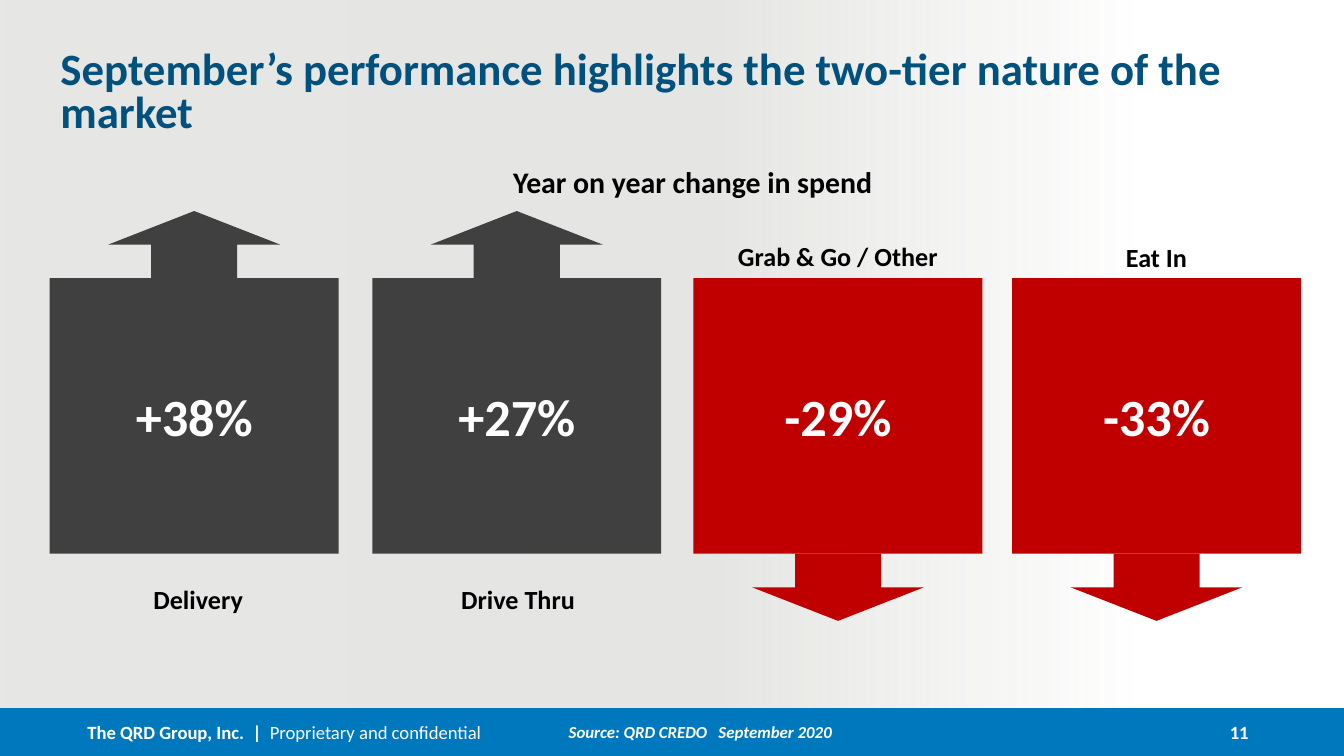
from lxml import etree
from pptx import Presentation
from pptx import util as u
from pptx.dml.color import RGBColor
from pptx.enum import shapes, text
from pptx.oxml.ns import qn

FONT = "Calibri"
WHITE, BLACK, BLUE, NAVY = "FFFFFF", "000000", "0078BE", "00517D"
GREY, RED = "404040", "C00000"
INSETS = (0.1, 0.05, 0.1, 0.05)
NO_INSETS = (0, 0, 0, 0)
LEFT, CENTER, RIGHT = text.PP_ALIGN.LEFT, text.PP_ALIGN.CENTER, text.PP_ALIGN.RIGHT
TOP, MIDDLE = text.MSO_ANCHOR.TOP, text.MSO_ANCHOR.MIDDLE

SLIDE_WIDTH = 10
SLIDE_HEIGHT = SLIDE_WIDTH * 9 / 16
FOOTER_TOP = 5.27
FOOTER_HEIGHT = SLIDE_HEIGHT - FOOTER_TOP
CARD_TOP, CARD_WIDTH, CARD_HEIGHT = 2.07, 2.15, 2.05
ARROW_LENGTH, ARROW_SPAN = 0.5, 1.28
CHANNELS = [
    ("Delivery", "+38%", 0.37, (0.43, 4.29, 2.09, 0.34)),
    ("Drive Thru", "+27%", 2.77, (2.79, 4.29, 2.13, 0.34)),
    ("Grab & Go / Other", "-29%", 5.16, (5.16, 1.74, 2.15, 0.34)),
    ("Eat In", "-33%", 7.53, (7.53, 1.75, 2.15, 0.34)),
]


def color(value):
    return RGBColor.from_string(value)


def inches(box):
    return [u.Inches(length) for length in box]


def write(shape, runs, size, ink, align=CENTER, anchor=TOP, insets=INSETS,
          italic=False, line_spacing=None, space_after=None):
    frame = shape.text_frame
    frame.word_wrap = True
    frame.vertical_anchor = anchor
    (frame.margin_left, frame.margin_top,
     frame.margin_right, frame.margin_bottom) = inches(insets)
    paragraph = frame.paragraphs[0]
    paragraph.alignment = align
    paragraph.line_spacing = line_spacing
    if space_after is not None:
        paragraph.space_after = u.Pt(space_after)
    for words, bold in runs:
        run = paragraph.add_run()
        run.text = words
        font = run.font
        font.name, font.size = FONT, u.Pt(size)
        font.bold, font.italic = bold, italic
        font.color.rgb = color(ink)


def add_text(slide, box, runs, size, ink, **options):
    write(slide.shapes.add_textbox(*inches(box)), runs, size, ink, **options)


def add_block(slide, kind, box, fill):
    shape = slide.shapes.add_shape(kind, *inches(box))
    shape.shadow.inherit = False
    shape.fill.solid()
    shape.fill.fore_color.rgb = color(fill)
    shape.line.fill.background()
    return shape


def add_fading_panel(slide, box):
    shape = add_block(slide, shapes.MSO_SHAPE.RECTANGLE, box, WHITE)
    shape.fill.gradient()
    shape.fill.gradient_angle = 180
    stops = shape._element.spPr.find(".//" + qn("a:gsLst"))
    for stop in list(stops):
        stops.remove(stop)
    for position, tone, alpha in ((0, "E5E5E3", 0), (38, "E5E5E3", 100), (100, "E6E6E5", 100)):
        stop = etree.SubElement(stops, qn("a:gs"), pos=str(position * 1000))
        tint = etree.SubElement(stop, qn("a:srgbClr"), val=tone)
        etree.SubElement(tint, qn("a:alpha"), val=str(alpha * 1000))


def add_channel(slide, name, change, left, label_box):
    rising = change.startswith("+")
    fill = GREY if rising else RED
    card = add_block(slide, shapes.MSO_SHAPE.RECTANGLE,
                     (left, CARD_TOP, CARD_WIDTH, CARD_HEIGHT), fill)
    write(card, [(change, True)], 28, WHITE, anchor=MIDDLE)

    center_x = left + CARD_WIDTH / 2
    offset = (CARD_HEIGHT + ARROW_LENGTH) / 2
    center_y = CARD_TOP + CARD_HEIGHT / 2 + (-offset if rising else offset)
    arrow = add_block(slide, shapes.MSO_SHAPE.RIGHT_ARROW,
                      (center_x - ARROW_LENGTH / 2, center_y - ARROW_SPAN / 2,
                       ARROW_LENGTH, ARROW_SPAN), fill)
    arrow.rotation = 270 if rising else 90
    add_text(slide, label_box, [(name, True)], 14, BLACK)


def add_footer(slide):
    add_block(slide, shapes.MSO_SHAPE.RECTANGLE,
              (0, FOOTER_TOP, SLIDE_WIDTH, FOOTER_HEIGHT), BLUE)
    add_text(slide, (0.65, FOOTER_TOP, 4.11, FOOTER_HEIGHT),
             [("The QRD Group, Inc.  |  ", True), ("Proprietary and confidential", False)],
             10, WHITE, align=LEFT, anchor=MIDDLE, insets=NO_INSETS)
    add_text(slide, (8.79, FOOTER_TOP, 0.65, FOOTER_HEIGHT), [("11", True)], 10, WHITE,
             align=RIGHT, anchor=MIDDLE, insets=(0, 0.05, 0.15, 0.05))
    add_text(slide, (3.41, 5.34, 3.6, 0.26), [("Source: QRD CREDO   September 2020", True)],
             9, WHITE, italic=True, line_spacing=0.85, space_after=14.4)


def main():
    presentation = Presentation()
    presentation.slide_width, presentation.slide_height = inches((SLIDE_WIDTH, SLIDE_HEIGHT))
    slide = presentation.slides.add_slide(presentation.slide_layouts[6])
    add_fading_panel(slide, (0, 0, 8.46, 5.28))
    add_footer(slide)
    add_text(slide, (0.45, 0.38, 9.1, 0.5),
             [("September’s performance highlights the two-tier nature of the market", True)],
             24, NAVY, align=LEFT, insets=NO_INSETS, line_spacing=0.8, space_after=2)
    add_text(slide, (3.29, 1.17, 3.73, 0.37), [("Year on year change in spend", True)], 16, BLACK)
    for channel in CHANNELS:
        add_channel(slide, *channel)
    presentation.save("out.pptx")


if __name__ == "__main__":
    main()
